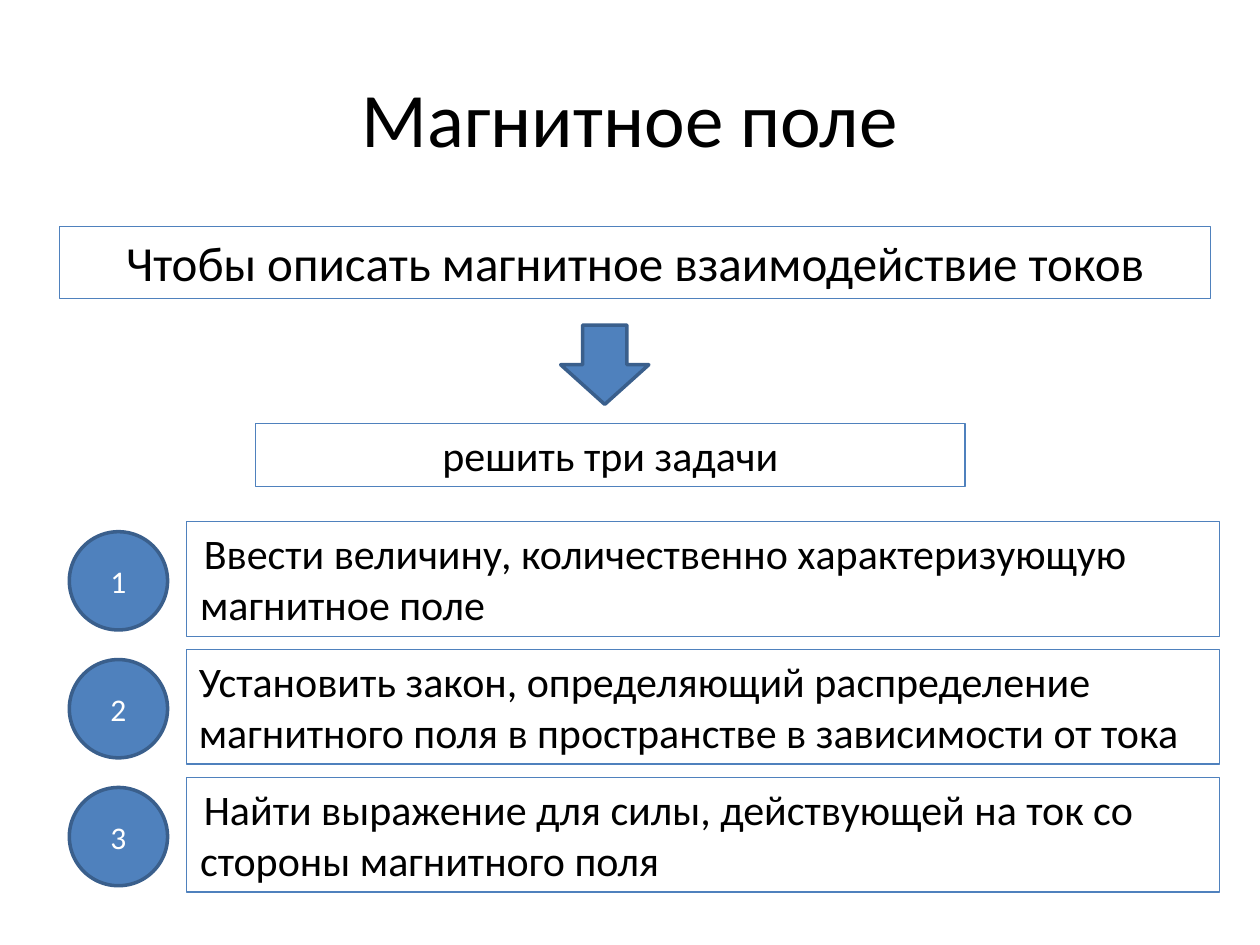
from pptx import Presentation
from pptx.dml.color import RGBColor as RGB
from pptx.enum.shapes import MSO_SHAPE as Kind
from pptx.enum.text import MSO_ANCHOR as Anchor, PP_ALIGN as Align
from pptx.util import Inches, Pt

COLORS = {"blue": "4F81BD", "edge": "3A5F8C", "black": "000000", "white": "FFFFFF"}

deck = Presentation()
deck.slide_width, deck.slide_height = Inches(10), Inches(7.5)
slide = deck.slides.add_slide(deck.slide_layouts[6])


def color(name):
    return RGB.from_string(COLORS[name])


def add_box(kind, place, text="", size=24, ink="black", fill=None, edge="blue",
            width=0.75, align=Align.CENTER, anchor=Anchor.TOP):
    """Add a shape, or a plain text box if kind is None; return its paragraph."""
    place = [Inches(n) for n in place]
    if kind is None:
        box = slide.shapes.add_textbox(*place)
    else:
        box = slide.shapes.add_shape(kind, *place)
        box.shadow.inherit = False
        box.line.color.rgb = color(edge)
        box.line.width = Pt(width)
        if fill:
            box.fill.solid()
            box.fill.fore_color.rgb = color(fill)
        else:
            box.fill.background()
    frame = box.text_frame
    frame.word_wrap = True
    frame.vertical_anchor = anchor
    para = frame.paragraphs[0]
    para.alignment = align
    if text:
        run = para.add_run()
        run.text = text
        run.font.name = "Calibri"
        run.font.size = Pt(size)
        run.font.color.rgb = color(ink)
    return para


solid = {"fill": "blue", "edge": "edge", "width": 2}

add_box(None, (0.5, 0.3, 9, 1.25), "Магнитное поле", 44, anchor=Anchor.MIDDLE)
add_box(Kind.RECTANGLE, (0.47, 1.8, 9.14, 0.57),
        "Чтобы описать магнитное взаимодействие токов", 28)
add_box(Kind.RECTANGLE, (2.03, 3.36, 5.63, 0.5), "решить три задачи")
add_box(Kind.DOWN_ARROW, (4.45, 2.58, 0.7, 0.63), **solid)

# Numbered tasks: (text, whether the first line is indented)
tasks = [
    ("Ввести величину, количественно характеризующую магнитное поле", True),
    ("Установить закон, определяющий распределение магнитного поля "
     "в пространстве в зависимости от тока", False),
    ("Найти выражение для силы, действующей на ток со стороны магнитного поля", True),
]
top, step = 4.14, 1.015
for i, (text, indent) in enumerate(tasks):
    y = top + i * step
    para = add_box(Kind.RECTANGLE, (1.48, y, 8.2, 0.91), text, align=Align.LEFT)
    if indent:
        props = para._p.get_or_add_pPr()
        props.set("marL", str(Inches(0.01)))
        props.set("indent", str(Inches(0.03)))
    add_box(Kind.OVAL, (0.55, y + 0.08, 0.78, 0.78), str(i + 1), 18, "white",
            anchor=Anchor.MIDDLE, **solid)

deck.save("out.pptx")
